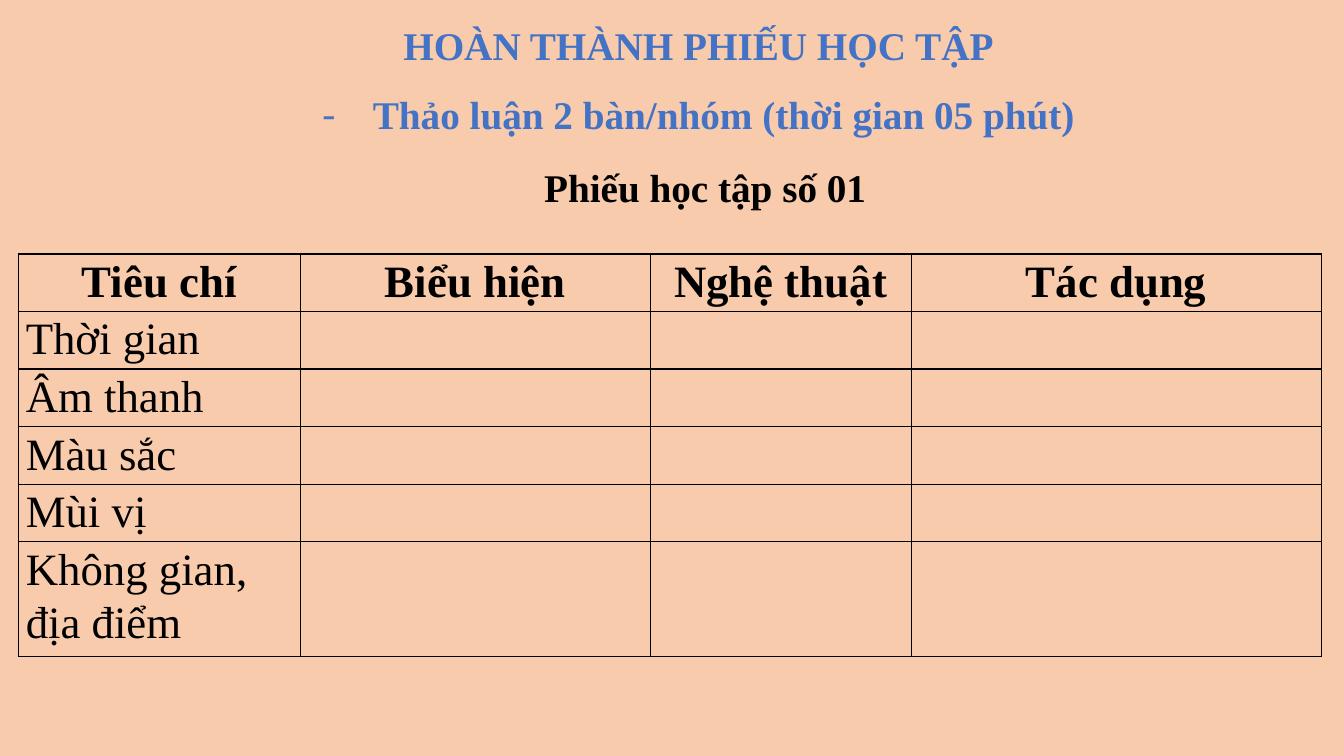
import pptx
import pptx.util
import pptx.dml.color
import pptx.enum.text
import pptx.oxml
import pptx.oxml.ns

Pt = pptx.util.Pt
RGB = pptx.dml.color.RGBColor
ALIGN = pptx.enum.text.PP_ALIGN
PEACH = RGB(0xF8, 0xCB, 0xAD)
BLUE = RGB(0x44, 0x72, 0xC4)
BLACK = RGB(0, 0, 0)
FONT = "Times New Roman"


def style(para, size, color, bold=True):
    for run in para.runs:
        run.font.name = FONT
        run.font.size = Pt(size)
        run.font.bold = bold
        run.font.color.rgb = color


def element(tag, inner="", **attrs):
    pairs = " ".join(f'{key}="{val}"' for key, val in attrs.items())
    space = pptx.oxml.ns.nsdecls("a")
    return pptx.oxml.parse_xml(f"<a:{tag} {space} {pairs}>{inner}</a:{tag}>")


deck = pptx.Presentation()
deck.slide_width = Pt(960)
deck.slide_height = Pt(540)
slide = deck.slides.add_slide(deck.slide_layouts[6])
slide.background.fill.solid()
slide.background.fill.fore_color.rgb = PEACH

title = slide.shapes.add_textbox(Pt(163.4), Pt(9.4), Pt(671), Pt(143.3)).text_frame
title.word_wrap = True
title.margin_top = Pt(5.6)
title.text = "HOÀN THÀNH PHIẾU HỌC TẬP\nThảo luận 2 bàn/nhóm (thời gian 05 phút)"
for para in title.paragraphs:
    para.alignment = ALIGN.CENTER
    style(para, 28, BLUE)
task = title.paragraphs[1]
task.space_before = Pt(16)
props = task._p.get_or_add_pPr()
props.set("marL", str(Pt(36)))
props.set("indent", str(Pt(-36)))
props.append(element("buFont", typeface=FONT))
props.append(element("buChar", char="-"))

label = slide.shapes.add_textbox(Pt(214.6), Pt(110.9), Pt(512.6), Pt(41)).text_frame
label.word_wrap = True
label.text = "Phiếu học tập số 01"
para = label.paragraphs[0]
para.line_spacing = 1.07
para.space_after = Pt(8)
para._p.get_or_add_pPr().set("marL", str(Pt(167)))
style(para, 28, BLACK)

heads = ["Tiêu chí", "Biểu hiện", "Nghệ thuật", "Tác dụng"]
topics = ["Thời gian", "Âm thanh", "Màu sắc", "Mùi vị", "Không gian, địa điểm"]
widths = [201.6, 249.8, 186.5, 293]
heights = [41.1] * 5 + [82.2]
rows = [heads] + [[topic, "", "", ""] for topic in topics]
table = slide.shapes.add_table(
    len(rows), len(heads), Pt(13), Pt(181.4), Pt(sum(widths)), Pt(sum(heights))
).table
table.first_row = False
table.horz_banding = False
for col, width in zip(table.columns, widths):
    col.width = Pt(width)
line = f'<a:solidFill><a:srgbClr val="{BLACK}"/></a:solidFill>'
for r, texts in enumerate(rows):
    table.rows[r].height = Pt(heights[r])
    for c, text in enumerate(texts):
        cell = table.cell(r, c)
        cell.margin_left = cell.margin_right = Pt(5.4)
        cell.margin_top = cell.margin_bottom = 0
        cell.fill.background()
        for i, side in enumerate(["lnL", "lnR", "lnT", "lnB"]):
            cell._tc.get_or_add_tcPr().insert(i, element(side, line, w=Pt(1)))
        if text:
            cell.text_frame.text = text
            para = cell.text_frame.paragraphs[0]
            para.line_spacing = 1.07
            para.alignment = ALIGN.LEFT if r else ALIGN.CENTER
            style(para, 32, BLACK, r == 0)

deck.save("out.pptx")
